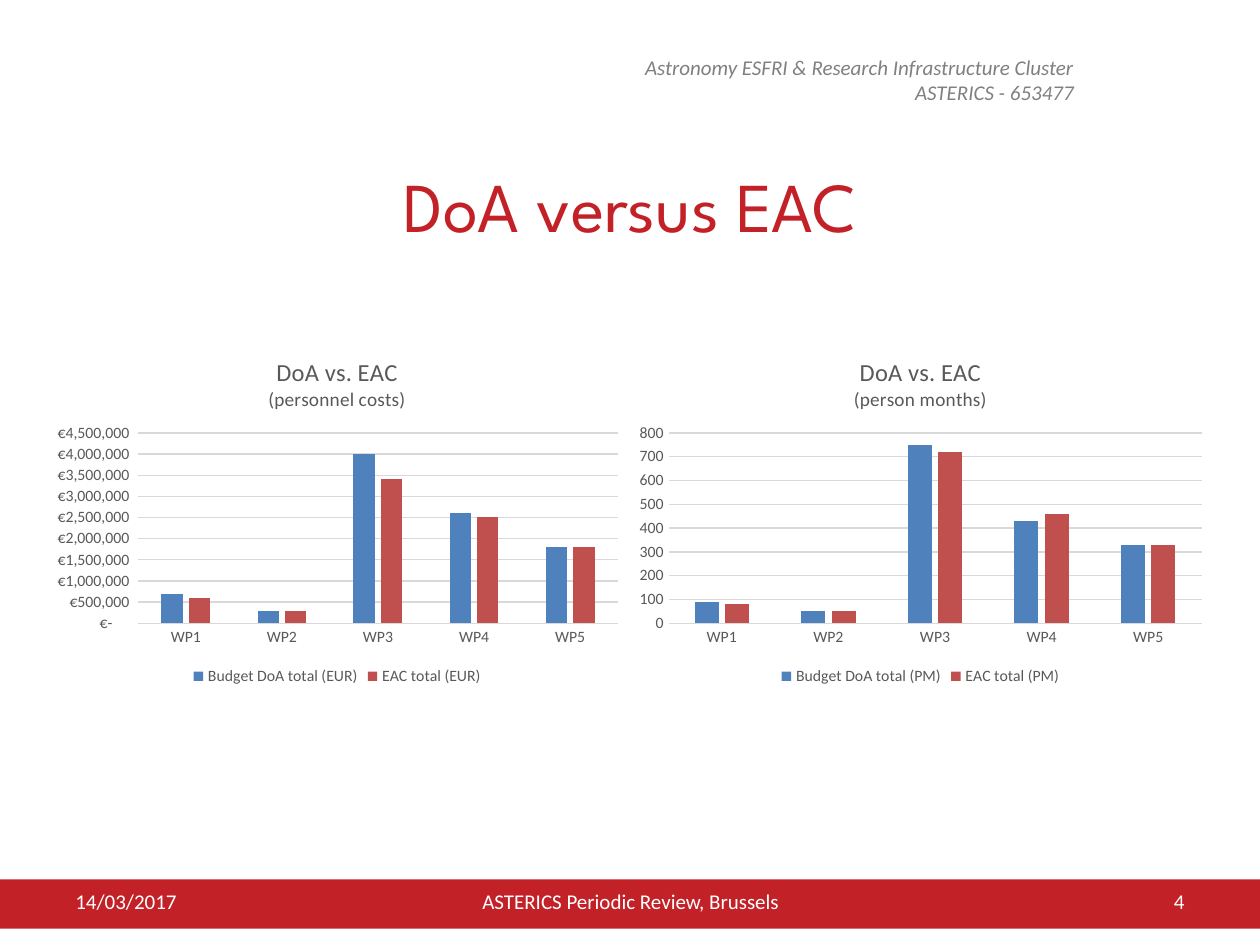
from dataclasses import dataclass

from lxml.etree import SubElement
from pptx import Presentation
from pptx.chart.data import CategoryChartData
from pptx.dml.color import RGBColor
from pptx.enum.chart import XL_CHART_TYPE, XL_LEGEND_POSITION, XL_TICK_MARK
from pptx.enum.shapes import MSO_SHAPE
from pptx.enum.text import MSO_ANCHOR, PP_ALIGN
from pptx.oxml.ns import qn
from pptx.util import Cm, Pt


@dataclass(frozen=True)
class Theme:
    red: str = "C32128"
    white: str = "FFFFFF"
    header_grey: str = "808080"
    chart_text: str = "595959"
    grid: str = "D9D9D9"
    series: tuple[str, ...] = ("4F81BD", "C0504D")
    body_font: str = "Calibri"
    title_font: str = "League Spartan"
    title_size: int = 40
    body_size: int = 12
    chart_title_size: int = 14
    chart_subtitle_size: int = 11
    chart_size: int = 9


@dataclass(frozen=True)
class Label:
    lines: tuple[str, ...]
    box: tuple[float, float, float, float]
    align: PP_ALIGN
    color: str
    size: int
    font: str = "Calibri"
    italic: bool = False
    anchor: MSO_ANCHOR = MSO_ANCHOR.MIDDLE


@dataclass(frozen=True)
class Comparison:
    left: float
    subtitle: str
    unit: str
    number_format: str
    axis_max: int
    axis_step: int
    plot_left: float
    plot_width: float
    budget: tuple[int, ...]
    estimate: tuple[int, ...]


THEME = Theme()
WORK_PACKAGES = [f"WP{number}" for number in range(1, 6)]
EURO_FORMAT = '_("€"* #,##0_);_("€"* \\(#,##0\\);_("€"* "-"??_);_(@_)'
FOOTER_TOP, FOOTER_HEIGHT = 17.65, 1.02

LABELS = [
    Label(("Astronomy ESFRI & Research Infrastructure Cluster", "ASTERICS - 653477"),
          (11.1, 0.97, 10.8, 1.27), PP_ALIGN.RIGHT, THEME.header_grey,
          THEME.body_size, italic=True, anchor=MSO_ANCHOR.TOP),
    Label(("DoA versus EAC",), (1.27, 2.92, 22.86, 2.39), PP_ALIGN.CENTER,
          THEME.red, THEME.title_size, THEME.title_font),
] + [
    Label((wording,), (left, FOOTER_TOP, width, FOOTER_HEIGHT), align,
          THEME.white, THEME.body_size)
    for wording, left, width, align in (
        ("14/03/2017", 1.27, 5.92, PP_ALIGN.LEFT),
        ("ASTERICS Periodic Review, Brussels", 8.69, 8.05, PP_ALIGN.CENTER),
        ("4", 18.21, 5.92, PP_ALIGN.RIGHT),
    )
]

COMPARISONS = [
    Comparison(0.89, "(personnel costs)", "EUR", EURO_FORMAT, 4500000, 500000, 0.16, 0.82,
               (700000, 300000, 4000000, 2600000, 1800000),
               (600000, 300000, 3400000, 2500000, 1800000)),
    Comparison(12.65, "(person months)", "PM", "#,##0", 800, 100, 0.07, 0.91,
               (90, 50, 750, 430, 330), (80, 50, 720, 460, 330)),
]


def apply(target, formats: dict) -> None:
    for attribute, value in formats.items():
        setattr(target, attribute, value)


def style_font(font, color: str, size: int, name: str = THEME.body_font,
               italic: bool = False) -> None:
    apply(font, {"name": name, "size": Pt(size), "italic": italic, "bold": False})
    font.color.rgb = RGBColor.from_string(color)


def style_line(line, color: str) -> None:
    line.color.rgb = RGBColor.from_string(color)
    line.width = Pt(0.75)


def add_label(slide, label: Label) -> None:
    frame = slide.shapes.add_textbox(*map(Cm, label.box)).text_frame
    apply(frame, {"word_wrap": True, "vertical_anchor": label.anchor,
                  "text": "\n".join(label.lines)})
    for paragraph in frame.paragraphs:
        paragraph.alignment = label.align
        style_font(paragraph.font, label.color, label.size, label.font, label.italic)


def add_footer_band(slide) -> None:
    band = slide.shapes.add_shape(MSO_SHAPE.RECTANGLE, *map(Cm, (0, 17.73, 25.4, 0.99)))
    band.shadow.inherit = False
    band.fill.solid()
    band.fill.fore_color.rgb = RGBColor.from_string(THEME.red)
    band.line.fill.background()


def place_plot(chart, left: float, width: float) -> None:
    """Fix the inner plot area, in fractions of the chart."""
    plot_area = chart.element.find(".//" + qn("c:plotArea"))
    for automatic in plot_area.findall(qn("c:layout")):
        plot_area.remove(automatic)
    layout = SubElement(plot_area, qn("c:layout"))
    plot_area.insert(0, layout)
    manual = SubElement(layout, qn("c:manualLayout"))
    settings = {"layoutTarget": "inner", "xMode": "edge", "yMode": "edge",
                "x": left, "y": 0.27, "w": width, "h": 0.54}
    for tag, value in settings.items():
        SubElement(manual, qn(f"c:{tag}")).set("val", str(value))


def add_comparison(slide, comparison: Comparison) -> None:
    figures = CategoryChartData()
    figures.categories = WORK_PACKAGES
    figures.add_series(f"Budget DoA total ({comparison.unit})", comparison.budget)
    figures.add_series(f"EAC total ({comparison.unit})", comparison.estimate)
    chart = slide.shapes.add_chart(
        XL_CHART_TYPE.COLUMN_CLUSTERED,
        *map(Cm, (comparison.left, 6.81, 11.81, 7.11)), figures).chart
    style_font(chart.font, THEME.chart_text, THEME.chart_size)

    heading = chart.chart_title.text_frame
    heading.text = f"DoA vs. EAC\n{comparison.subtitle}"
    sizes = (THEME.chart_title_size, THEME.chart_subtitle_size)
    for paragraph, size in zip(heading.paragraphs, sizes):
        style_font(paragraph.runs[0].font, THEME.chart_text, size)

    chart.has_legend = True
    apply(chart.legend, {"position": XL_LEGEND_POSITION.BOTTOM, "include_in_layout": False})
    style_font(chart.legend.font, THEME.chart_text, THEME.chart_size)

    bars = chart.plots[0]
    apply(bars, {"gap_width": 219, "overlap": -27, "vary_by_categories": False})
    for series, color in zip(bars.series, THEME.series):
        series.format.fill.solid()
        series.format.fill.fore_color.rgb = RGBColor.from_string(color)

    for axis in (chart.category_axis, chart.value_axis):
        apply(axis, {"major_tick_mark": XL_TICK_MARK.NONE,
                     "minor_tick_mark": XL_TICK_MARK.NONE})
        style_font(axis.tick_labels.font, THEME.chart_text, THEME.chart_size)
    style_line(chart.category_axis.format.line, THEME.grid)
    amounts = chart.value_axis
    apply(amounts, {"minimum_scale": 0, "maximum_scale": comparison.axis_max,
                    "major_unit": comparison.axis_step, "has_major_gridlines": True})
    apply(amounts.tick_labels, {"number_format": comparison.number_format,
                                "number_format_is_linked": False})
    amounts.format.line.fill.background()
    style_line(amounts.major_gridlines.format.line, THEME.grid)
    place_plot(chart, comparison.plot_left, comparison.plot_width)


def main() -> None:
    deck = Presentation()
    apply(deck, {"slide_width": Cm(25.4), "slide_height": Cm(19.05)})
    slide = deck.slides.add_slide(deck.slide_layouts[6])
    add_footer_band(slide)
    for label in LABELS:
        add_label(slide, label)
    for comparison in COMPARISONS:
        add_comparison(slide, comparison)
    deck.save("out.pptx")


if __name__ == "__main__":
    main()
